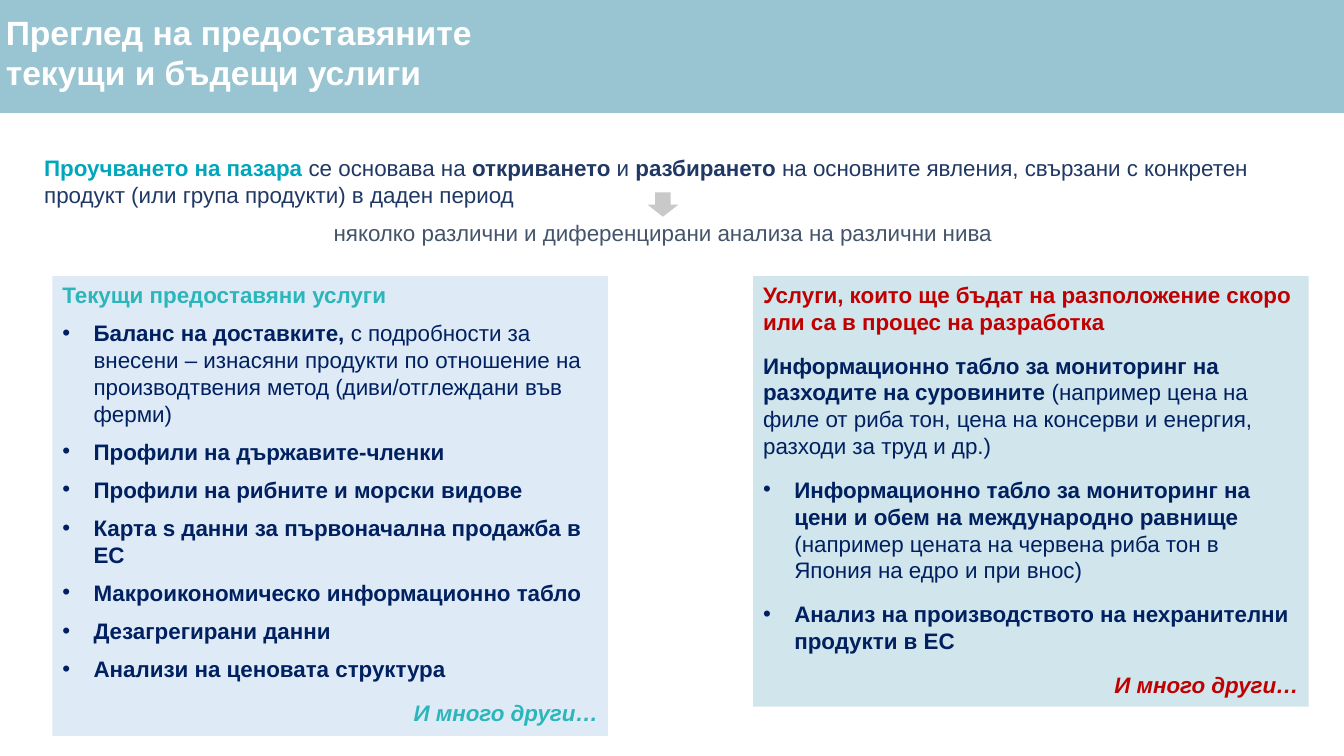
import pptx
import pptx.dml.color
import pptx.enum.shapes
import pptx.enum.text
import pptx.oxml
import pptx.oxml.ns
import pptx.util

Inches = pptx.util.Inches
Pt = pptx.util.Pt
RGBColor = pptx.dml.color.RGBColor
MSO_SHAPE = pptx.enum.shapes.MSO_SHAPE
PP_ALIGN = pptx.enum.text.PP_ALIGN

WHITE = RGBColor(0xFF, 0xFF, 0xFF)
BAND_BLUE = RGBColor(0x98, 0xC5, 0xD1)
TEAL = RGBColor(0x00, 0xA6, 0xBC)
INTRO_BLUE = RGBColor(0x20, 0x38, 0x64)
SLATE = RGBColor(0x44, 0x54, 0x6A)
ARROW_GREY = RGBColor(0xC9, 0xC9, 0xC9)
CURRENT_FILL = RGBColor(0xDE, 0xEB, 0xF7)
CURRENT_ACCENT = RGBColor(0x2B, 0xB6, 0xB9)
FUTURE_FILL = RGBColor(0xD0, 0xE5, 0xEC)
FUTURE_ACCENT = RGBColor(0xC0, 0x00, 0x00)
NAVY = RGBColor(0x00, 0x20, 0x60)

FRAME_FORMAT = {
    "word_wrap": True,
    "auto_size": pptx.enum.text.MSO_AUTO_SIZE.SHAPE_TO_FIT_TEXT,
    "vertical_anchor": pptx.enum.text.MSO_ANCHOR.TOP,
}
MORE = "И много други…"

# Each service is its bold part followed by its plain part
CURRENT_SERVICES = [
    ("Баланс на доставките, ",
     "с подробности за внесени – изнасяни продукти по отношение на "
     "производтвения метод (диви/отглеждани във ферми)"),
    ("Профили на държавите-членки", ""),
    ("Профили на рибните и морски видове", ""),
    ("Карта s данни за първоначална продажба в ЕС", ""),
    ("Макроикономическо информационно табло", ""),
    ("Дезагрегирани данни", ""),
    ("Анализи на ценовата структура", ""),
]
COST_DASHBOARD = (
    "Информационно табло за мониторинг на разходите на суровините ",
    "(например цена на филе от риба тон, цена на консерви и енергия, "
    "разходи за труд и др.)")
FUTURE_SERVICES = [
    ("Информационно табло за мониторинг на цени и обем на международно равнище ",
     "(например цената на червена риба тон в Япония на едро и при внос)"),
    ("Анализ на производството на нехранителни продукти в ЕС", ""),
]


def apply_format(target, values):
    for name, value in values.items():
        setattr(target, name, value)


def add_span(para, text, color, size=16, **style):
    span = para.add_run()
    span.text = text
    apply_format(span.font, {"name": "Arial", "size": Pt(size), "bold": False, **style})
    span.font.color.rgb = color


def add_shape(slide, kind, place, fill):
    shape = slide.shapes.add_shape(kind, *map(Inches, place))
    shape.shadow.inherit = False
    shape.fill.solid()
    shape.fill.fore_color.rgb = fill
    shape.line.fill.background()
    return shape


def add_text(slide, place, align=PP_ALIGN.LEFT):
    box = slide.shapes.add_textbox(*map(Inches, place))
    apply_format(box.text_frame, FRAME_FORMAT)
    para = box.text_frame.paragraphs[0]
    para.alignment = align
    return para


def add_para(frame, space, align=PP_ALIGN.LEFT):
    para = frame.add_paragraph()
    apply_format(para, {"space_before": Pt(space), "alignment": align})
    return para


def add_bullet(para):
    properties = para._p.get_or_add_pPr()
    properties.set("marL", str(Inches(0.31)))
    properties.set("indent", str(Inches(-0.31)))
    namespace = pptx.oxml.ns.nsdecls("a")
    for tag in ('a:buFont {} typeface="Arial"', 'a:buChar {} char="•"'):
        properties.append(pptx.oxml.parse_xml(f"<{tag.format(namespace)}/>"))


def add_service(frame, service, space, bulleted=True):
    para = add_para(frame, space)
    if bulleted:
        add_bullet(para)
    name, detail = service
    add_span(para, name, NAVY, bold=True)
    if detail:
        add_span(para, detail, NAVY)


def add_panel(slide, left, height, fill, accent, heading, services, space, lead=None):
    panel = add_shape(slide, MSO_SHAPE.RECTANGLE, (left, 2.74, 5.51, height), fill)
    frame = panel.text_frame
    apply_format(frame, FRAME_FORMAT)
    frame.paragraphs[0].alignment = PP_ALIGN.LEFT
    add_span(frame.paragraphs[0], heading, accent, bold=True)
    if lead:
        add_service(frame, lead, space, bulleted=False)
    for service in services:
        add_service(frame, service, space)
    closing = add_para(frame, 12, PP_ALIGN.RIGHT)
    add_span(closing, MORE, accent, bold=True, italic=True)


def main():
    deck = pptx.Presentation()
    apply_format(deck, {"slide_width": Inches(13.33), "slide_height": Inches(7.5)})
    slide = deck.slides.add_slide(deck.slide_layouts[6])

    # Title band
    add_shape(slide, MSO_SHAPE.RECTANGLE, (0, 0, 13.33, 1.12), BAND_BLUE)
    title = add_text(slide, (-0.04, 0.07, 4.93, 0.91))
    add_span(title, "Преглед на предоставяните текущи и бъдещи услиги", WHITE, 24, bold=True)

    # Introduction
    intro = add_text(slide, (0.34, 1.48, 12.35, 0.64))
    for text, color, bold in [
        ("Проучването на пазара ", TEAL, True),
        ("се основава на ", INTRO_BLUE, False),
        ("откриването", INTRO_BLUE, True),
        (" и ", INTRO_BLUE, False),
        ("разбирането", INTRO_BLUE, True),
        (" на основните явления, свързани с конкретен продукт "
         "(или група продукти) в даден период", INTRO_BLUE, False),
    ]:
        add_span(intro, text, color, bold=bold)
    levels = add_text(slide, (2.93, 2.12, 7.29, 0.37), PP_ALIGN.CENTER)
    add_span(levels, "няколко различни и диференцирани анализа на различни нива", SLATE)
    add_shape(slide, MSO_SHAPE.DOWN_ARROW, (6.42, 1.91, 0.31, 0.24), ARROW_GREY)

    # Current and future services
    add_panel(slide, 0.52, 4.56, CURRENT_FILL, CURRENT_ACCENT,
              "Текущи предоставяни услуги", CURRENT_SERVICES, 8)
    add_panel(slide, 7.47, 4.27, FUTURE_FILL, FUTURE_ACCENT,
              "Услуги, които ще бъдат на разположение скоро или са в процес на разработка",
              FUTURE_SERVICES, 12, COST_DASHBOARD)

    deck.save("out.pptx")


if __name__ == "__main__":
    main()
